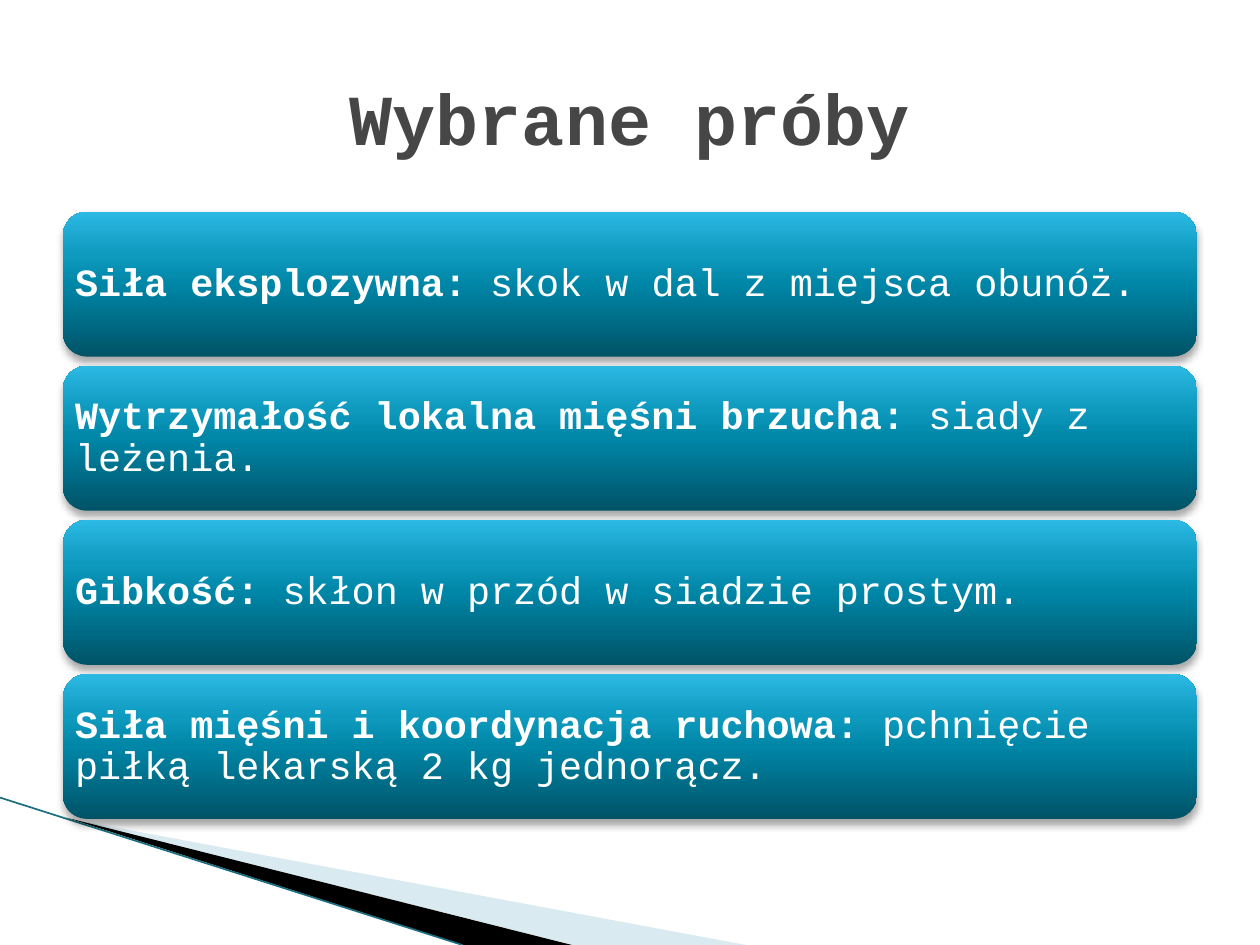
import pptx
import pptx.util
import pptx.dml.color
import pptx.enum.shapes
import pptx.enum.text
import pptx.oxml
import pptx.oxml.ns

Inches = pptx.util.Inches
RGB = pptx.dml.color.RGBColor
qn = pptx.oxml.ns.qn
NS = pptx.oxml.ns.nsdecls("a")

WHITE = RGB(0xFF, 0xFF, 0xFF)
BLACK = RGB(0, 0, 0)
GREY = RGB(0x46, 0x46, 0x46)
PALE = RGB(0xA0, 0xCB, 0xDC)
TEAL = RGB(0x1A, 0x6E, 0x80)
STOPS = [
    (0, RGB(0x00, 0x53, 0x67)),
    (50, RGB(0x00, 0x86, 0xA7)),
    (70, RGB(0x0E, 0x9A, 0xBE)),
    (100, RGB(0x2C, 0xB9, 0xE3)),
]

TESTS = [
    ("Siła eksplozywna: ", "skok w dal z miejsca obunóż."),
    ("Wytrzymałość lokalna mięśni brzucha: ", "siady z leżenia."),
    ("Gibkość: ", "skłon w przód w siadzie prostym."),
    ("Siła mięśni i koordynacja ruchowa: ",
     "pchnięcie piłką lekarską 2 kg jednorącz."),
]


def assign(item, values):
    for name, value in values.items():
        setattr(item, name, value)


class Deck:
    face = "Courier New"

    def __init__(self, slide):
        self.slide = slide

    def style(self, font, size, color, bold):
        assign(font, {"name": self.face, "size": pptx.util.Pt(size), "bold": bold})
        font.color.rgb = color

    def title(self, text, left, top, width, height):
        box = self.slide.shapes.title
        assign(box, {"left": Inches(left), "top": Inches(top),
                     "width": Inches(width), "height": Inches(height)})
        box.text_frame.text = text
        box.text_frame.vertical_anchor = pptx.enum.text.MSO_ANCHOR.MIDDLE
        line = box.text_frame.paragraphs[0]
        line.alignment = pptx.enum.text.PP_ALIGN.CENTER
        self.style(line.runs[0].font, 41, GREY, True)

    def wedge(self, points, color, alpha=100):
        points = [(Inches(x), Inches(y)) for x, y in points]
        pen = self.slide.shapes.build_freeform(*points[0])
        pen.add_line_segments(points[1:], close=True)
        shape = pen.convert_to_shape()
        shape.shadow.inherit = False
        shape.line.fill.background()
        shape.fill.solid()
        shape.fill.fore_color.rgb = color
        if alpha < 100:
            tone = next(shape.element.spPr.iter(qn("a:srgbClr")))
            tone.append(pptx.oxml.parse_xml(f'<a:alpha {NS} val="{alpha * 1000}"/>'))

    def rule(self, start, end, color, width):
        line = self.slide.shapes.add_connector(
            pptx.enum.shapes.MSO_CONNECTOR.STRAIGHT,
            *(Inches(n) for n in start + end))
        line.line.color.rgb = color
        line.line.width = pptx.util.Pt(width)
        line.element.spPr.append(pptx.oxml.parse_xml(f"<a:effectLst {NS}/>"))

    def card(self, lead, rest, left, top, width, height):
        shape = self.slide.shapes.add_shape(
            pptx.enum.shapes.MSO_SHAPE.ROUNDED_RECTANGLE,
            *(Inches(n) for n in (left, top, width, height)))
        shape.line.fill.background()
        self.shade(shape)
        self.drop(shape)
        frame = shape.text_frame
        inset = Inches(0.04)
        assign(frame, {"word_wrap": True, "margin_left": inset,
                       "margin_right": inset, "margin_top": inset,
                       "margin_bottom": inset,
                       "vertical_anchor": pptx.enum.text.MSO_ANCHOR.MIDDLE})
        line = frame.paragraphs[0]
        assign(line, {"alignment": pptx.enum.text.PP_ALIGN.LEFT,
                      "line_spacing": 0.9})
        for text, bold in ((lead, True), (rest, False)):
            run = line.add_run()
            run.text = text
            self.style(run.font, 22, WHITE, bold)

    def shade(self, shape):
        shape.fill.gradient()
        shape.fill.gradient_angle = 90
        stops = next(shape.element.spPr.iter(qn("a:gsLst")))
        for stop in list(stops):
            stops.remove(stop)
        for spot, color in STOPS:
            stops.append(pptx.oxml.parse_xml(
                f'<a:gs {NS} pos="{spot * 1000}"><a:srgbClr val="{color}"/></a:gs>'))

    def drop(self, shape):
        shape.shadow.inherit = False
        blur, dist = pptx.util.Pt(4), pptx.util.Pt(3)
        shape.element.spPr.find(qn("a:effectLst")).append(pptx.oxml.parse_xml(
            f'<a:outerShdw {NS} blurRad="{blur}" dist="{dist}" dir="5400000" '
            'rotWithShape="0"><a:srgbClr val="000000"><a:alpha val="35000"/>'
            '</a:srgbClr></a:outerShdw>'))


def main():
    show = pptx.Presentation()
    show.slide_width, show.slide_height = Inches(10), Inches(7.5)
    deck = Deck(show.slides.add_slide(show.slide_layouts[5]))

    # Corner decoration
    deck.wedge([(0.55, 6.5), (5.92, 7.5), (4.55, 7.5)], PALE, 40)
    deck.wedge([(0.53, 6.49), (4.54, 7.5), (3.68, 7.5)], BLACK)
    deck.rule((0, 6.33), (3.67, 7.5), TEAL, 0.95)

    # Stack of test cards
    for row, (lead, rest) in enumerate(TESTS):
        deck.card(lead, rest, 0.5, 1.68 + row * 1.223, 9, 1.15)

    # Heading
    deck.title("Wybrane próby", 0.5, 0.3, 9, 1.25)

    show.save("out.pptx")


if __name__ == "__main__":
    main()
